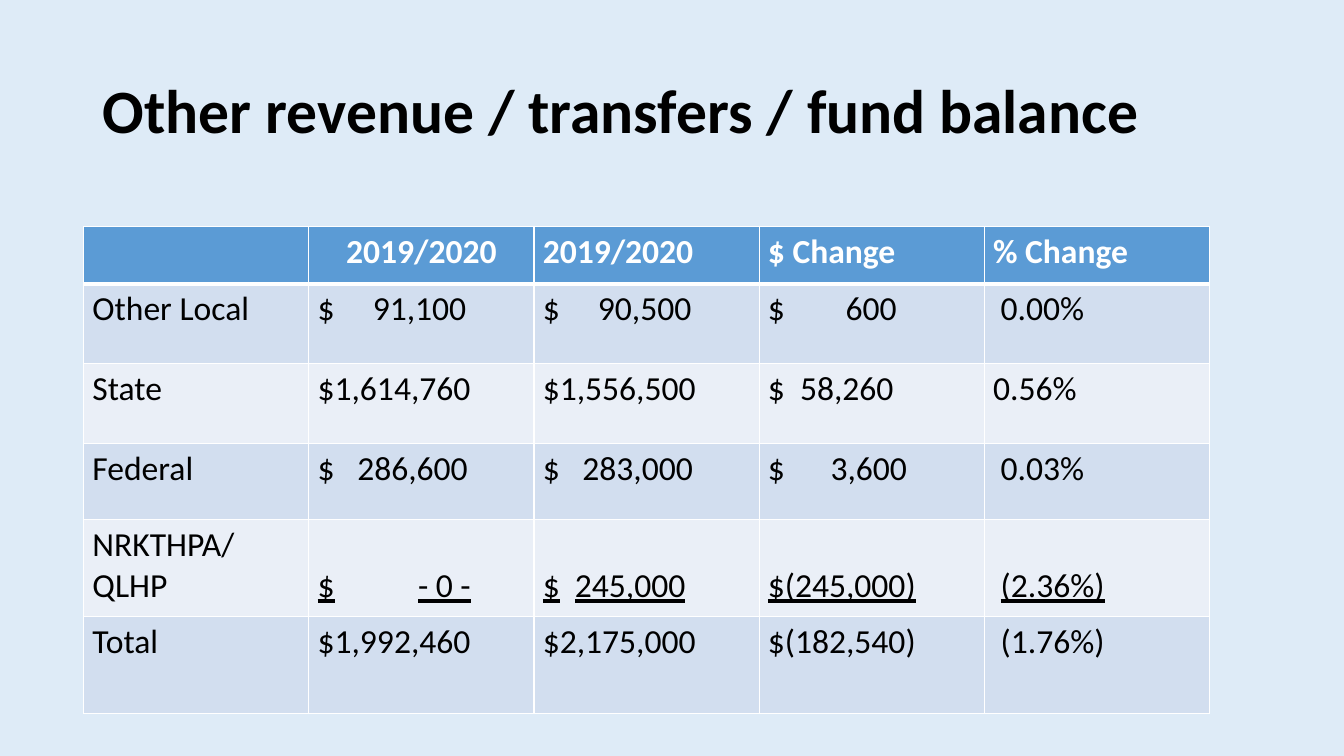
from lxml import etree
from pptx import Presentation
from pptx.dml.color import RGBColor
from pptx.enum.text import MSO_ANCHOR, PP_ALIGN
from pptx.oxml.ns import qn
from pptx.util import Cm, Pt

LEFT, CENTER = PP_ALIGN.LEFT, PP_ALIGN.CENTER
TOP, MIDDLE, BOTTOM = MSO_ANCHOR.TOP, MSO_ANCHOR.MIDDLE, MSO_ANCHOR.BOTTOM

FONT = "Calibri"
COLORS = {
    "background": "DEEBF7",
    "header": "5B9BD5",
    "odd": "D2DEEF",
    "even": "EAEFF7",
    "white": "FFFFFF",
    "black": "000000",
}

# Boxes in cm: left, top, width, height
TITLE_BOX = (2.34, 1.02, 29.21, 3.68)
TABLE_BOX = (2.11, 5.7, 28.37, 12.29)
ROW_HEIGHTS = [1.45, 2.01, 2.01, 1.92, 2.45, 2.45]

ROWS = [
    ["", "2019/2020", "2019/2020", "$ Change", "% Change"],
    ["Other Local", "$\t91,100", "$\t90,500", "$\t600", " 0.00%"],
    ["State", "$1,614,760", "$1,556,500", "$\t58,260", "0.56%"],
    ["Federal", "$\t286,600", "$\t283,000", "$\t3,600", " 0.03%"],
    ["NRKTHPA/\nQLHP", "$\t- 0 -", "$\t245,000", "$(245,000)", " (2.36%)"],
    ["Total", "$1,992,460", "$2,175,000", "$(182,540)", " (1.76%)"],
]
UNDERLINED_ROW = 4

# Where the amount starts after the dollar sign, in cm, by (row, column)
TAB_STOPS = {
    (1, 1): 1.39, (1, 2): 1.39, (1, 3): 1.96,
    (2, 3): 0.81,
    (3, 1): 1.0, (3, 2): 1.0, (3, 3): 1.58,
    (4, 1): 2.53, (4, 2): 0.81,
}


def rgb(name):
    return RGBColor.from_string(COLORS[name])


def format_span(span, size, color, bold=False, underline=False):
    font = span.font
    font.name, font.size = FONT, Pt(size)
    font.bold, font.underline = bold, underline
    font.color.rgb = rgb(color)


def set_tab_stop(para, stop):
    properties = para._p.get_or_add_pPr()
    tab_list = etree.SubElement(properties, qn("a:tabLst"))
    etree.SubElement(tab_list, qn("a:tab"), pos=str(Cm(stop)), algn="l")


def set_borders(cell, top, bottom):
    """White rules; they must come before the fill in the cell properties."""
    properties = cell._tc.get_or_add_tcPr()
    widths = {"a:lnL": 1, "a:lnR": 1, "a:lnT": top, "a:lnB": bottom}
    for index, (tag, width) in enumerate(widths.items()):
        line = etree.Element(qn(tag), w=str(Pt(width)))
        fill = etree.SubElement(line, qn("a:solidFill"))
        etree.SubElement(fill, qn("a:srgbClr"), val=COLORS["white"])
        properties.insert(index, line)


def add_title(page, box, text):
    title = page.shapes.title
    title.left, title.top, title.width, title.height = map(Cm, box)
    frame = title.text_frame
    frame.text = text
    frame.vertical_anchor = MIDDLE
    para = frame.paragraphs[0]
    para.alignment, para.line_spacing = LEFT, 0.9
    format_span(para.runs[0], 44, "black", bold=True)


def fill_cell(cell, row, column, text):
    is_header = row == 0
    underline = row == UNDERLINED_ROW and column > 0
    cell.fill.solid()
    cell.fill.fore_color.rgb = rgb(
        "header" if is_header else "odd" if row % 2 else "even")
    set_borders(cell, 3 if row == 1 else 1, 3 if is_header else 1)

    # Underlined amounts sit on the second line of their label
    cell.vertical_anchor = BOTTOM if underline else TOP
    cell.margin_bottom = Cm(0.25 if underline else 0.13)
    cell.margin_left = cell.margin_right = Cm(0.22)

    cell.text_frame.text = text
    for para in cell.text_frame.paragraphs:
        para.alignment = CENTER if is_header and column == 1 else LEFT
        if (row, column) in TAB_STOPS:
            set_tab_stop(para, TAB_STOPS[row, column])
        if underline and text.startswith(" "):
            para.runs[0].text = " "
            para.add_run().text = text.strip()
        for span in para.runs:
            format_span(span, 24, "white" if is_header else "black",
                        is_header, underline and span.text != " ")
        if not para.runs:
            para.font.size = Pt(24)


def add_revenue_table(page, box, rows):
    frame = page.shapes.add_table(len(rows), len(rows[0]), *map(Cm, box))
    table = frame.table
    for column in table.columns:
        column.width = Cm(box[2] / len(rows[0]))
    for table_row, height in zip(table.rows, ROW_HEIGHTS):
        table_row.height = Cm(height)
    for row, texts in enumerate(rows):
        for column, text in enumerate(texts):
            fill_cell(table.cell(row, column), row, column, text)


def main():
    deck = Presentation()
    deck.slide_width, deck.slide_height = Cm(33.87), Cm(19.05)
    page = deck.slides.add_slide(deck.slide_layouts[5])
    page.background.fill.solid()
    page.background.fill.fore_color.rgb = rgb("background")
    add_title(page, TITLE_BOX, "Other revenue / transfers / fund balance")
    add_revenue_table(page, TABLE_BOX, ROWS)
    deck.save("out.pptx")


if __name__ == "__main__":
    main()
